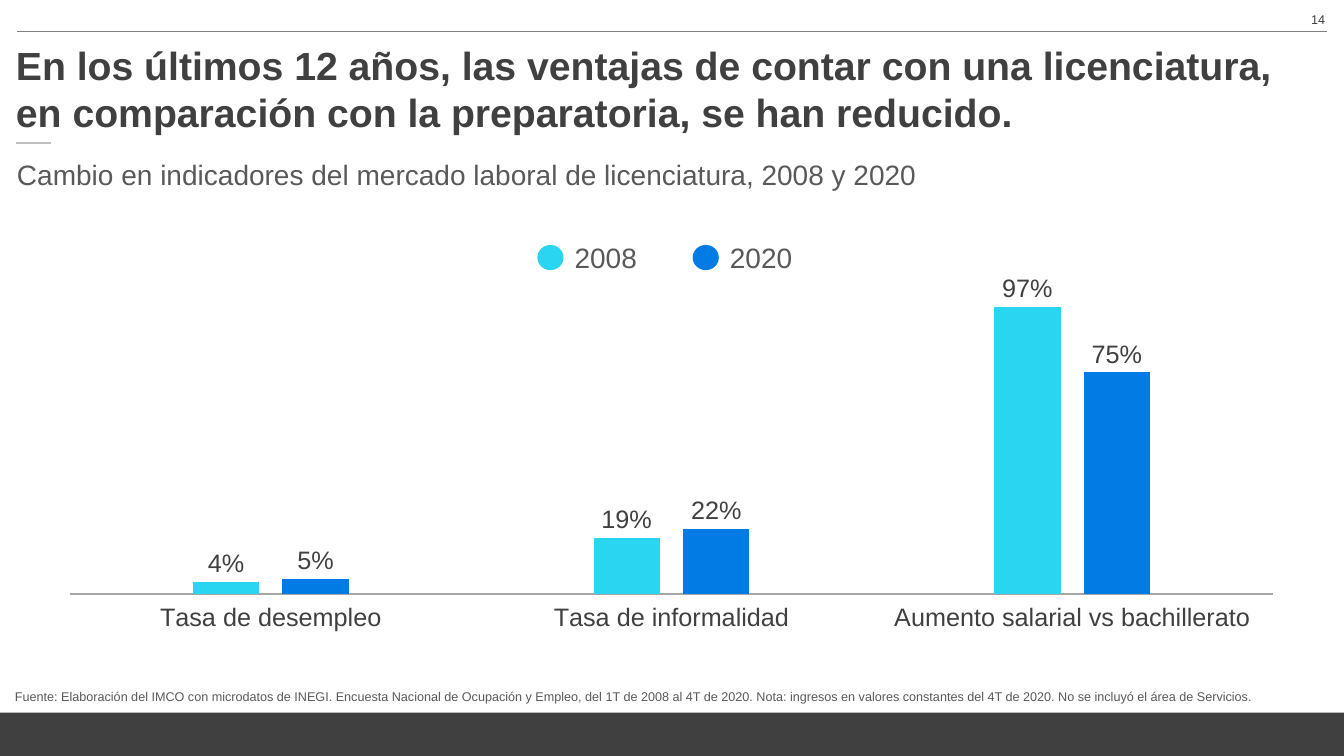
from lxml import etree
from pptx import Presentation
from pptx.chart.data import CategoryChartData
from pptx.dml.color import RGBColor
from pptx.enum.chart import XL_CHART_TYPE as CT, XL_LABEL_POSITION as LP
from pptx.enum.chart import XL_TICK_LABEL_POSITION as TLP, XL_TICK_MARK as TM
from pptx.enum.shapes import MSO_CONNECTOR as CON, MSO_SHAPE as SHP
from pptx.enum.text import MSO_ANCHOR as ANC, PP_ALIGN as AL
from pptx.oxml import parse_xml
from pptx.oxml.ns import nsdecls, qn
from pptx.util import Pt

PX = 9144  # 100 px to the inch
FONT = "Arial"
DARK, GREY = "404040", "595959"
YEARS = [("2008", "29D5F0", (0.04, 0.19, 0.97)),
         ("2020", "027CE4", (0.05, 0.22, 0.75))]
INDICATORS = ["Tasa de desempleo", "Tasa de informalidad",
              "Aumento salarial vs bachillerato"]


def px(*lengths):
    return [n * PX for n in lengths]


def rgb(color):
    return RGBColor.from_string(color)


def add_text(shapes, box, text, size=20, color=GREY, bold=False,
             align=AL.LEFT, anchor=ANC.TOP):
    tf = shapes.add_textbox(*px(*box)).text_frame
    tf.word_wrap = True
    tf.vertical_anchor = anchor
    p = tf.paragraphs[0]
    p.alignment = align
    r = p.add_run()
    r.text = text
    r.font.name, r.font.size, r.font.bold = FONT, Pt(size), bold
    r.font.color.rgb = rgb(color)


def add_solid(shapes, kind, box, color):
    sp = shapes.add_shape(kind, *px(*box))
    sp.shadow.inherit = False
    sp.fill.solid()
    sp.fill.fore_color.rgb = rgb(color)
    sp.line.fill.background()


def add_rule(shapes, x1, x2, y, color, width):
    line = shapes.add_connector(CON.STRAIGHT, *px(x1, y, x2, y))
    line.line.color.rgb = rgb(color)
    line.line.width = Pt(width)
    etree.SubElement(line._element.spPr, qn("a:effectLst"))


def set_plot_area(chart, x, y, w, h):
    parts = "".join(f'<c:{tag} val="{val}"/>' for tag, val in [
        ("layoutTarget", "inner"), ("xMode", "edge"), ("yMode", "edge"),
        ("x", x), ("y", y), ("w", w), ("h", h)])
    layout = parse_xml(f'<c:layout {nsdecls("c")}><c:manualLayout>{parts}'
                       '</c:manualLayout></c:layout>')
    area = chart._chartSpace.find(".//" + qn("c:plotArea"))
    for old in area.findall(qn("c:layout")):
        area.remove(old)
    area.insert(0, layout)


def add_columns(shapes, box):
    data = CategoryChartData(number_format="0%")
    data.categories = INDICATORS
    for year, _, values in YEARS:
        data.add_series(year, values)
    chart = shapes.add_chart(CT.COLUMN_CLUSTERED, *px(*box), data).chart
    chart.has_legend = chart.has_title = False
    chart.font.name, chart.font.size = FONT, Pt(18)
    chart.font.color.rgb = rgb(DARK)
    set_plot_area(chart, 0.02, 0.2, 0.96, 0.69)

    # Axes
    cat, val = chart.category_axis, chart.value_axis
    cat.major_tick_mark = cat.minor_tick_mark = TM.NONE
    cat.tick_label_position = TLP.LOW
    cat.format.line.color.rgb = rgb("A6A6A6")
    cat.format.line.width = Pt(1)
    val.minimum_scale, val.maximum_scale, val.major_unit = 0, 1, 2
    val.has_major_gridlines = val.visible = False

    # Columns and their labels
    plot = chart.plots[0]
    plot.gap_width, plot.overlap = 369, -35
    plot.vary_by_categories = False
    for series, (_, color, _) in zip(plot.series, YEARS):
        series.format.fill.solid()
        series.format.fill.fore_color.rgb = rgb(color)
        labels = series.data_labels
        labels.show_value = True
        labels.number_format, labels.number_format_is_linked = "0%", False
        labels.position = LP.OUTSIDE_END


def add_legend(shapes, left, step):
    group = shapes.add_group_shape().shapes
    for i, (year, color, _) in enumerate(YEARS):
        x = left + i * step
        add_solid(group, SHP.OVAL, (x, 243, 26, 25), color)
        add_text(group, (x + 27, 233, 82, 44), year, anchor=ANC.BOTTOM)


def main():
    prs = Presentation()
    prs.slide_width, prs.slide_height = px(1333, 750)
    shapes = prs.slides.add_slide(prs.slide_layouts[6]).shapes

    # Frame: footer band, top rule, page number
    add_solid(shapes, SHP.RECTANGLE, (0, 707, 1333, 43), DARK)
    add_rule(shapes, 17, 1316, 31, "808080", 0.75)
    add_text(shapes, (1024, 7, 300, 40), "14", size=9, color=DARK,
             align=AL.RIGHT)

    # Headings
    add_text(shapes, (6, 36, 1318, 60),
             "En los últimos 12 años, las ventajas de contar con una "
             "licenciatura, en comparación con la preparatoria, se han "
             "reducido.", size=28, color=DARK, bold=True)
    add_rule(shapes, 16, 51, 142, "BFBFBF", 1.5)
    add_text(shapes, (7, 151, 937, 77),
             "Cambio en indicadores del mercado laboral de licenciatura, "
             "2008 y 2020")

    # Chart and legend
    add_columns(shapes, (45, 211, 1242, 425))
    add_legend(shapes, 533, 154)

    # Source note
    add_text(shapes, (5, 676, 1299, 27),
             "Fuente: Elaboración del IMCO con microdatos de INEGI. Encuesta "
             "Nacional de Ocupación y Empleo, del 1T de 2008 al 4T de 2020. "
             "Nota: ingresos en valores constantes del 4T de 2020. No se "
             "incluyó el área de Servicios.", size=9, anchor=ANC.BOTTOM)

    prs.save("out.pptx")


if __name__ == "__main__":
    main()
